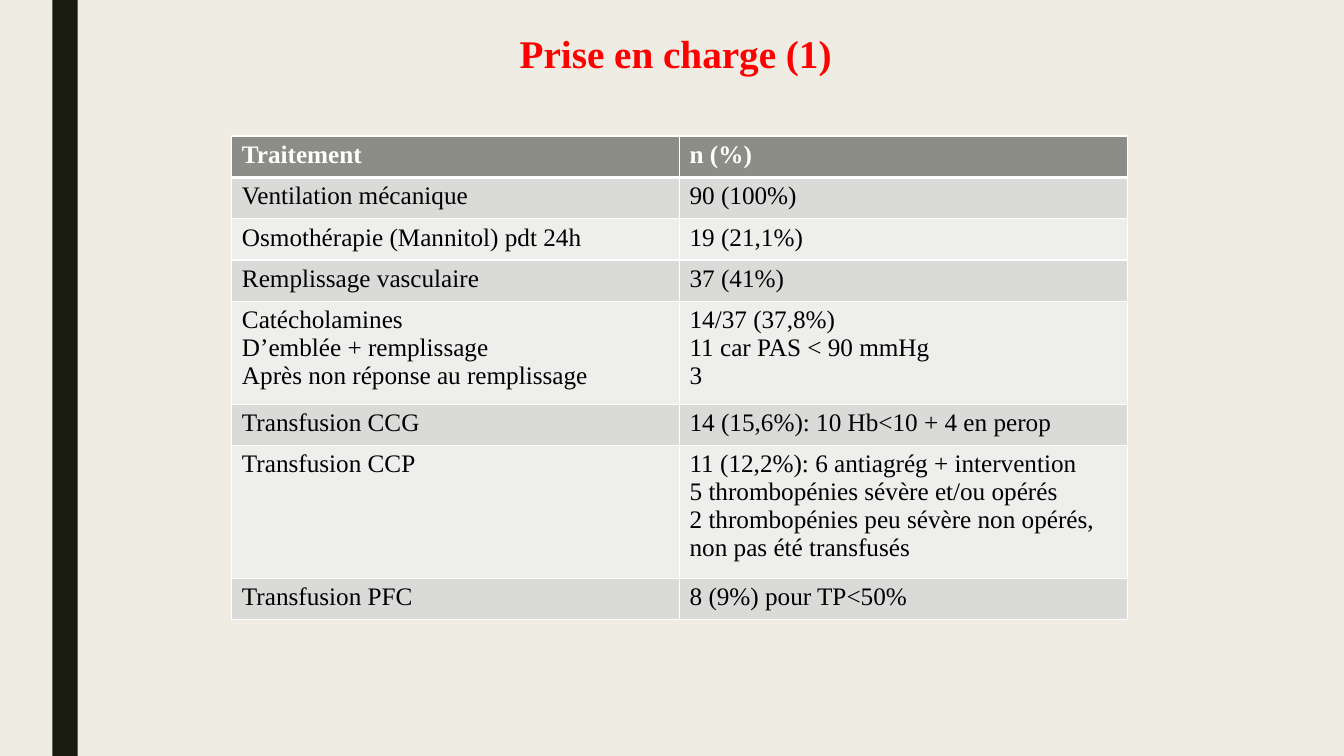
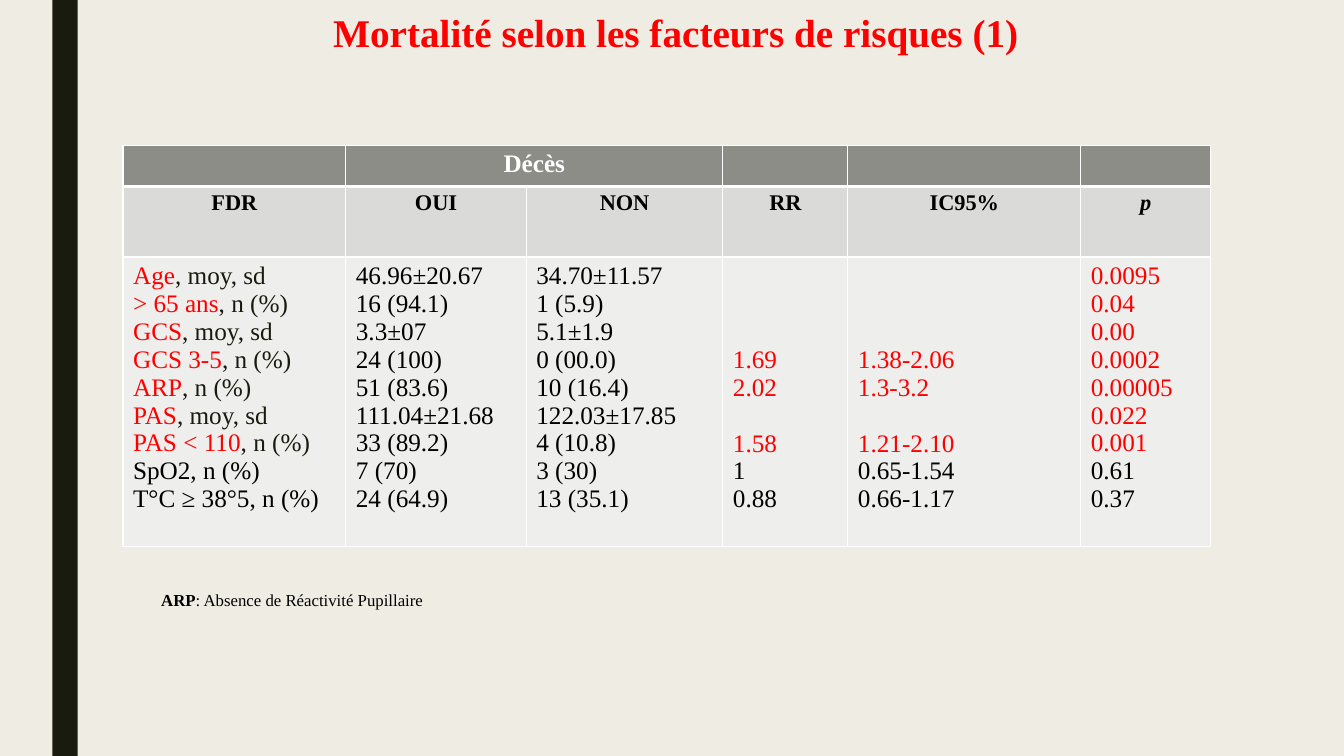
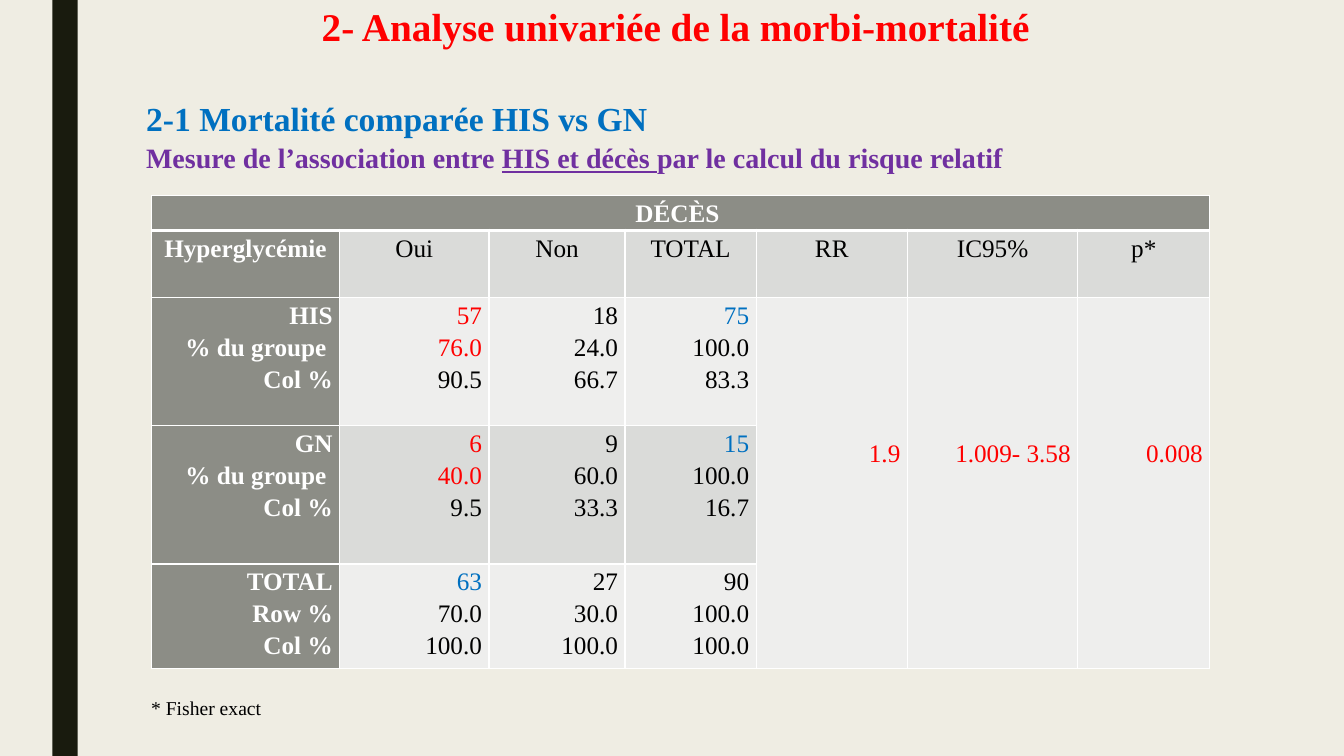
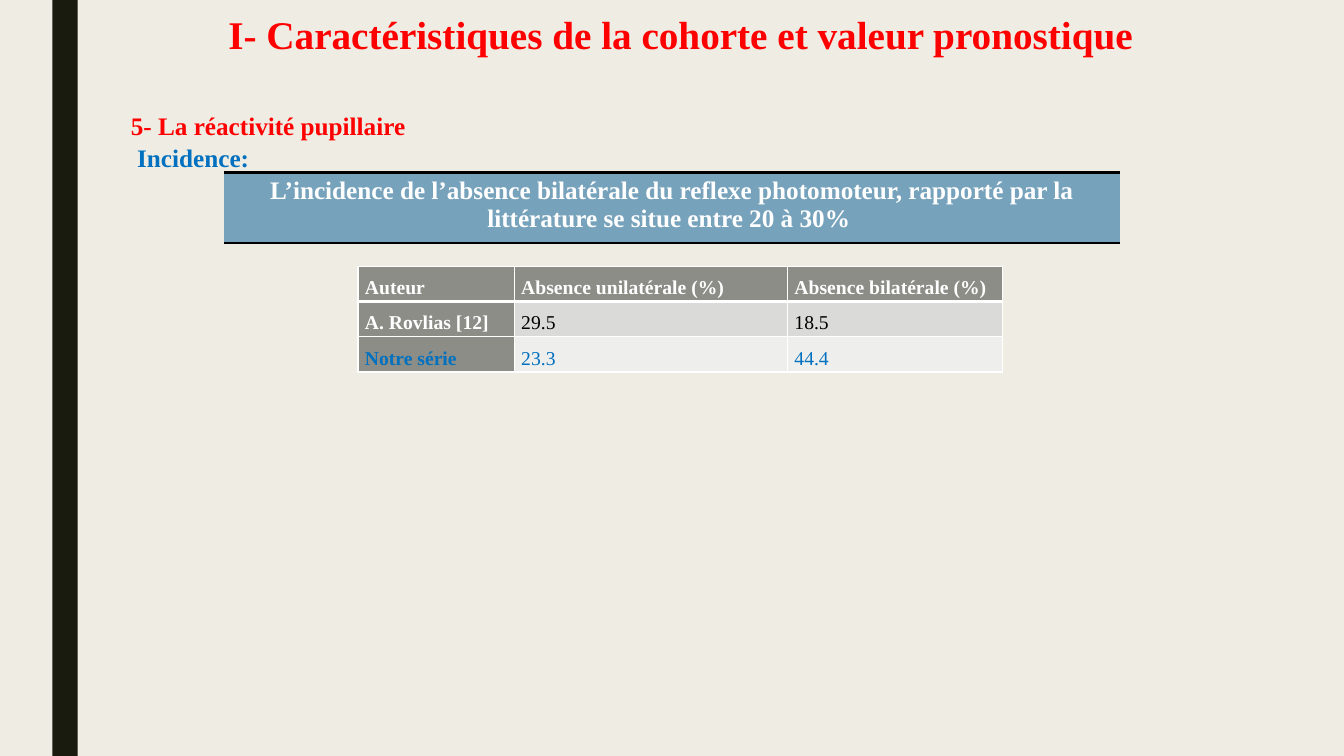
from dataclasses import dataclass, field
from typing import NamedTuple

from lxml.etree import SubElement as Sub
from pptx import Presentation
from pptx.dml.color import RGBColor as RGB
from pptx.enum.shapes import MSO_SHAPE as Shape
from pptx.enum.text import MSO_ANCHOR as Anchor, MSO_AUTO_SIZE as Fit, PP_ALIGN as Align
from pptx.oxml.ns import qn
from pptx.util import Pt

SCALE = 9144


@dataclass(frozen=True)
class Theme:
    font: str = "Times New Roman"
    back: str = "EFEDE3"
    dark: str = "191B0E"
    head: str = "8C8D86"
    odd: str = "DADBD9"
    even: str = "EEEEED"
    banner: str = "77A2BB"
    white: str = "FFFFFF"
    black: str = "000000"
    red: str = "FF0000"
    blue: str = "0070C0"
    purple: str = "7030A0"
    title: int = 28
    lead: int = 24
    sub: int = 20
    text: int = 18
    label: int = 16
    small: int = 14
    note: int = 12


T = Theme()


class Box(NamedTuple):
    left: int
    top: int
    width: int
    height: int


class Run(NamedTuple):
    text: str
    color: str = T.black
    bold: bool = False
    italic: bool = False
    under: bool = False
    size: int = 0


class Line(NamedTuple):
    runs: list[Run]
    before: int = 0


class Style(NamedTuple):
    size: int = T.text
    align: Align = Align.LEFT
    space: float = 1.0
    side: int = 10
    top: int = 5


class Cell(NamedTuple):
    lines: list[Line]
    style: Style = Style()
    span: tuple[int, int] = (1, 1)


class Edge(NamedTuple):
    color: str
    width: int


@dataclass
class Grid:
    left: int
    top: int
    cols: list[int]
    rows: list[int]
    cells: dict[tuple[int, int], Cell] = field(default_factory=dict)
    side_head: bool = False


PLAIN = Style()
MID = Style(align=Align.CENTER)
LABEL = Style(T.label, Align.CENTER, 1.15, 7, 0)
HEAD = LABEL._replace(size=T.text)
COUNT = HEAD._replace(align=Align.RIGHT)
LOW = COUNT._replace(top=137)
SMALL = Style(T.small, Align.JUSTIFY, 1.5, 7, 0)
NOTE = Style(T.note, space=1.08)


def px(size: int) -> int:
    return size * SCALE


def lines(text: str, color: str = T.black, bold: bool = False) -> list[Line]:
    return [Line([Run(part, color, bold)]) for part in text.split("\n")]


def white(text: str) -> list[Line]:
    return lines(text, T.white, True)


def write(frame, items: list[Line], style: Style) -> None:
    frame.word_wrap = True
    for i, item in enumerate(items):
        para = frame.paragraphs[0] if i == 0 else frame.add_paragraph()
        para.alignment = style.align
        para.line_spacing = style.space
        para.space_before = Pt(item.before)
        for part in item.runs:
            run = para.add_run()
            run.text = part.text
            font = run.font
            font.name = T.font
            font.size = Pt(part.size or style.size)
            font.bold, font.italic, font.underline = part.bold, part.italic, part.under
            font.color.rgb = RGB.from_string(part.color)


def add_slide(deck, layout, text: str, box: Box):
    slide = deck.slides.add_slide(layout)
    title = slide.shapes.title
    title.left, title.top, title.width, title.height = map(px, box)
    frame = title.text_frame
    frame.auto_size = Fit.NONE
    frame.vertical_anchor = Anchor.TOP
    write(frame, [Line([Run(text, T.red, True)])],
          Style(T.title, Align.CENTER, 0.89))
    return slide


def add_note(slide, box: Box, items: list[Line], style: Style = NOTE) -> None:
    write(slide.shapes.add_textbox(*map(px, box)).text_frame, items, style)


def edge_cell(cell, edges: dict[str, Edge | None]) -> None:
    props = cell._tc.get_or_add_tcPr()
    for i, side in enumerate("LRTB"):
        edge = edges[side]
        line = Sub(props, qn(f"a:ln{side}"))
        props.insert(i, line)
        if edge is None:
            Sub(line, qn("a:noFill"))
        else:
            line.set("w", str(Pt(edge.width)))
            Sub(Sub(line, qn("a:solidFill")), qn("a:srgbClr")).set("val", edge.color)


def fill_cell(cell, color: str) -> None:
    cell.fill.solid()
    cell.fill.fore_color.rgb = RGB.from_string(color)


def make_table(slide, grid: Grid):
    box = Box(grid.left, grid.top, sum(grid.cols), sum(grid.rows))
    table = slide.shapes.add_table(len(grid.rows), len(grid.cols), *map(px, box)).table
    table.first_row = table.horz_banding = False
    for col, width in zip(table.columns, grid.cols):
        col.width = px(width)
    for row, height in zip(table.rows, grid.rows):
        row.height = px(height)
    for (r, c), item in grid.cells.items():
        cell = table.cell(r, c)
        down, over = item.span
        if item.span != (1, 1):
            cell.merge(table.cell(r + down - 1, c + over - 1))
        style = item.style
        cell.margin_left = cell.margin_right = px(style.side)
        cell.margin_top = px(style.top)
        cell.margin_bottom = px(min(style.top, 5))
        write(cell.text_frame, item.lines, style)
    return table


def add_grid(slide, grid: Grid) -> None:
    table = make_table(slide, grid)
    thin, thick = Edge(T.white, 1), Edge(T.white, 3)
    for r in range(len(grid.rows)):
        for c in range(len(grid.cols)):
            cell = table.cell(r, c)
            head = r == 0 or (grid.side_head and c == 0)
            fill_cell(cell, T.head if head else T.odd if r % 2 else T.even)
            edge_cell(cell, {"L": thin, "R": thin,
                             "T": thick if r == 1 else thin,
                             "B": thick if r == 0 else thin})


def add_banner(slide, grid: Grid) -> None:
    cell = make_table(slide, grid).cell(0, 0)
    fill_cell(cell, T.banner)
    rule = Edge(T.black, 2)
    edge_cell(cell, {"L": None, "R": None, "T": rule, "B": rule})


def set_layout(deck):
    layout = deck.slide_layouts[5]
    layout.background.fill.solid()
    layout.background.fill.fore_color.rgb = RGB.from_string(T.back)
    return layout


def add_band(slide, layout) -> None:
    band = slide.shapes.add_shape(Shape.RECTANGLE, *map(px, Box(52, 0, 25, 750)))
    band.shadow.inherit = False
    band.fill.solid()
    band.fill.fore_color.rgb = RGB.from_string(T.dark)
    band.line.fill.background()
    layout.shapes._spTree.insert(2, band.element)


def add_care(deck, layout) -> None:
    slide = add_slide(deck, layout, "Prise en charge (1) ", Box(150, 30, 1050, 93))
    add_band(slide, layout)
    data = [
        ("Traitement", "n (%)"),
        ("Ventilation mécanique", "90 (100%)"),
        ("Osmothérapie (Mannitol) pdt 24h", "19 (21,1%)"),
        ("Remplissage vasculaire", "37 (41%)"),
        ("Catécholamines\nD’emblée + remplissage\nAprès non réponse au remplissage",
         "14/37 (37,8%)\n11 car PAS < 90 mmHg\n3"),
        ("Transfusion CCG", "14 (15,6%): 10 Hb<10 + 4 en perop"),
        ("Transfusion CCP",
         "11 (12,2%): 6 antiagrég + intervention\n5 thrombopénies sévère et/ou opérés\n"
         "2 thrombopénies peu sévère non opérés, non pas été transfusés"),
        ("Transfusion PFC", "8 (9%) pour TP<50%"),
    ]
    grid = Grid(230, 135, [444] * 2, [41] * 4 + [102, 41, 132, 41])
    for r, row in enumerate(data):
        for c, text in enumerate(row):
            grid.cells[r, c] = Cell(lines(text) if r else white(text))
    add_grid(slide, grid)


def add_risks(deck, layout) -> None:
    slide = add_slide(deck, layout, "Mortalité selon les facteurs de risques (1) ",
                      Box(150, 9, 1050, 53))
    grid = Grid(122, 144, [221, 179, 195, 124, 231, 129], [41, 70, 287])
    grid.cells[0, 1] = Cell(white("Décès"), MID, (1, 2))
    for c, text in enumerate(["FDR", "OUI", "NON", "RR", "IC95%", "p"]):
        run = Run(text, bold=True, italic=text == "p")
        grid.cells[1, c] = Cell([Line([run])], LABEL)
    factors = [("Age", ", moy, sd"), ("> 65 ans", ", n (%)"), ("GCS", ", moy, sd"),
               ("GCS 3-5", ", n (%)"), ("ARP", ", n (%)"), ("PAS", ", moy, sd"),
               ("PAS < 110", ", n (%)")]
    names = [Line([Run(name, T.red), Run(unit, T.dark)]) for name, unit in factors]
    grid.cells[2, 0] = Cell(names + lines("SpO2, n (%)\nT°C ≥ 38°5, n (%)"))
    grid.cells[2, 1] = Cell(lines(
        "46.96±20.67\n16 (94.1)\n3.3±07\n24 (100)\n51 (83.6)\n111.04±21.68\n"
        "33 (89.2)\n7 (70)\n24 (64.9)"))
    grid.cells[2, 2] = Cell(lines(
        "34.70±11.57\n1 (5.9)\n5.1±1.9\n0 (00.0)\n10 (16.4)\n122.03±17.85\n"
        "4 (10.8)\n3 (30)\n13 (35.1)"))
    ratios = [("1.69\n2.02", "1.58", "1\n0.88"),
              ("1.38-2.06\n1.3-3.2", "1.21-2.10", "0.65-1.54\n0.66-1.17")]
    for c, (first, third, rest) in enumerate(ratios, 3):
        gap = Line([Run(third, T.red)], 20)
        grid.cells[2, c] = Cell(lines(first, T.red) + [gap] + lines(rest),
                                PLAIN._replace(top=88))
    grid.cells[2, 5] = Cell(
        lines("0.0095\n0.04\n0.00\n0.0002\n0.00005\n0.022\n0.001", T.red)
        + lines("0.61\n0.37"))
    add_grid(slide, grid)
    add_note(slide, Box(150, 579, 482, 30),
             [Line([Run("ARP", bold=True), Run(": Absence de Réactivité Pupillaire")])])


def add_deaths(deck, layout) -> None:
    slide = add_slide(deck, layout, "2- Analyse univariée de la morbi-mortalité ",
                      Box(150, 3, 1050, 95))
    aim = Run("Mesure de l’association entre ", T.purple, True, size=T.sub)
    add_note(slide, Box(135, 89, 1148, 85), [
        Line([Run("2-1 Mortalité comparée HIS vs GN", T.blue, True, size=T.lead)]),
        Line([aim, aim._replace(text="HIS et décès ", under=True),
              aim._replace(text="par le calcul du risque relatif")]),
    ])
    grid = Grid(150, 194, [187, 148, 135, 130, 150, 169, 131],
                [34, 67, 127, 137, 103], side_head=True)
    grid.cells[0, 0] = Cell(white("DÉCÈS "), HEAD, (1, 7))
    heads = ["Hyperglycémie", "Oui", "Non", "TOTAL", "RR", "IC95%", "p*"]
    for c, text in enumerate(heads):
        grid.cells[1, c] = Cell(lines(text) if c else white(text), HEAD)
    part = "% du groupe "
    groups = [
        (f"HIS\n{part}\nCol %", "57 76.0 90.5", "18 24.0 66.7", "75 100.0 83.3"),
        (f"GN\n{part}\nCol %", "6 40.0 9.5", "9 60.0 33.3", "15 100.0 16.7"),
        ("TOTAL\nRow %\nCol %", "63 70.0 100.0", "27 30.0 100.0", "90 100.0 100.0"),
    ]
    red, blue, black = T.red, T.blue, T.black
    tints = {(2, 1): [red, red, black], (3, 1): [red, red, black],
             (4, 1): [blue, black, black],
             (2, 3): [blue, black, black], (3, 3): [blue, black, black]}
    for r, (name, *counts) in enumerate(groups, 2):
        grid.cells[r, 0] = Cell(white(name), COUNT)
        for c, text in enumerate(counts, 1):
            hues = tints.get((r, c), [black] * 3)
            grid.cells[r, c] = Cell(
                [Line([Run(value, hue)]) for value, hue in zip(text.split(), hues)], COUNT)
    for c, text in enumerate(["1.9", "1.009- 3.58", "0.008"], 4):
        grid.cells[2, c] = Cell(lines(text, red), LOW, (3, 1))
    add_grid(slide, grid)
    add_note(slide, Box(140, 684, 292, 34), lines("* Fisher exact"),
             NOTE._replace(size=T.small))


def add_pupils(deck, layout) -> None:
    slide = add_slide(deck, layout,
                      "I- Caractéristiques de la cohorte et valeur pronostique",
                      Box(150, 11, 1050, 56))
    add_note(slide, Box(120, 102, 400, 71),
             lines("5- La réactivité pupillaire", T.red, True)
             + lines(" Incidence:", T.blue, True), NOTE._replace(size=T.text))
    claim = ("L’incidence de l’absence bilatérale du reflexe photomoteur, rapporté par la "
             "littérature se situe entre 20 à 30% ")
    add_banner(slide, Grid(222, 171, [889], [70], {(0, 0): Cell(white(claim), MID)}))
    data = [("Auteur", "Absence unilatérale (%)", "Absence bilatérale (%)"),
            ("A. Rovlias [12]", "29.5", "18.5"),
            ("Notre série", "23.3", "44.4")]
    grid = Grid(355, 264, [155, 271, 213], [35] * 3, side_head=True)
    for r, row in enumerate(data):
        for c, text in enumerate(row):
            head = r == 0 or c == 0
            color = T.blue if r == 2 else T.white if head else T.black
            grid.cells[r, c] = Cell(lines(text, color, head), SMALL)
    add_grid(slide, grid)


def main() -> None:
    deck = Presentation()
    deck.slide_width, deck.slide_height = px(1333), px(750)
    layout = set_layout(deck)
    for add in (add_care, add_risks, add_deaths, add_pupils):
        add(deck, layout)
    deck.save("out.pptx")


if __name__ == "__main__":
    main()
